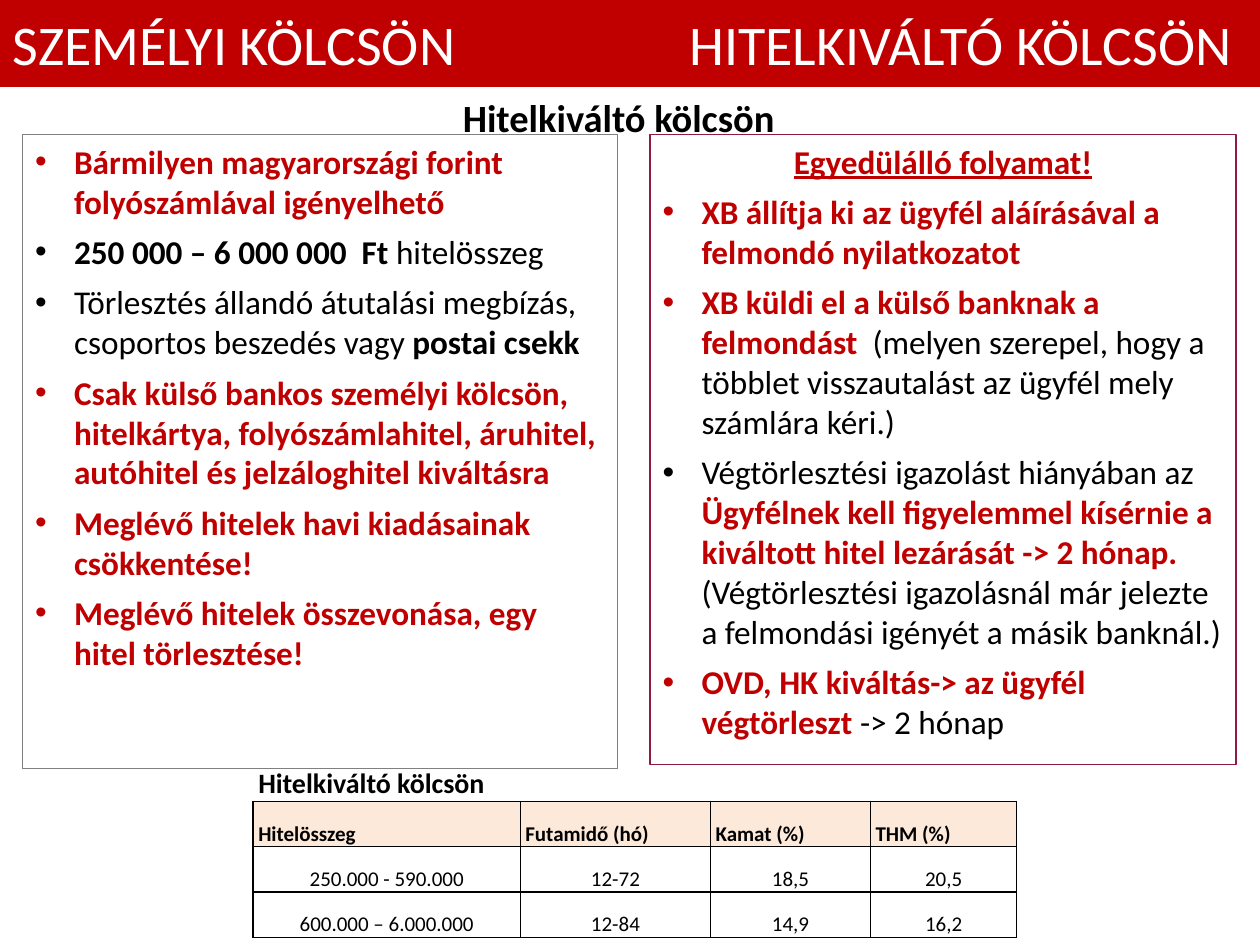
from lxml.etree import SubElement
from pptx import Presentation
from pptx.dml.color import RGBColor
from pptx.enum.shapes import MSO_SHAPE
from pptx.enum.text import MSO_ANCHOR, PP_ALIGN
from pptx.oxml.ns import qn
from pptx.util import Emu, Inches, Pt

FONT = "Calibri"
COLORS = {"red": "C00000", "black": "000000", "white": "FFFFFF", "gray": "808080",
          "wine": "8C1D40", "peach": "FDE9D9"}

# Run styles: colour, bold, underlined
STYLES = {"key": ("red", True, False), "strong": ("black", True, False),
          "plain": ("black", False, False), "headline": ("red", True, True),
          "banner": ("white", False, False)}

BANNER = "SZEMÉLYI KÖLCSÖN\tHITELKIVÁLTÓ KÖLCSÖN"
HEADING = "Hitelkiváltó kölcsön"

CONDITIONS = [
    [("Bármilyen magyarországi forint folyószámlával igényelhető", "key")],
    [("250 000 – 6 000 000  Ft ", "strong"), ("hitelösszeg", "plain")],
    [("Törlesztés állandó átutalási megbízás, csoportos beszedés vagy ", "plain"),
     ("postai csekk", "strong")],
    [("Csak külső bankos személyi kölcsön, hitelkártya, folyószámlahitel, áruhitel, "
      "autóhitel és jelzáloghitel kiváltásra", "key")],
    [("Meglévő hitelek havi kiadásainak csökkentése!", "key")],
    [("Meglévő hitelek összevonása, egy hitel törlesztése!", "key")],
]
PROCESS = [
    [("Egyedülálló folyamat!", "headline")],
    [("XB állítja ki az ügyfél aláírásával a felmondó nyilatkozatot", "key")],
    [("XB küldi el a külső banknak a felmondást  ", "key"),
     ("(melyen szerepel, hogy a többlet visszautalást az ügyfél mely számlára kéri.)", "plain")],
    [("Végtörlesztési igazolást hiányában az ", "plain"),
     ("Ügyfélnek kell figyelemmel kísérnie a kiváltott hitel lezárását -> 2 hónap. ", "key"),
     ("(Végtörlesztési igazolásnál már jelezte a felmondási igényét a másik banknál.)", "plain")],
    [("OVD, HK kiváltás-> az ügyfél végtörleszt ", "key"), ("-> 2 hónap", "plain")],
]
RATES = [
    [HEADING, "", "", ""],
    ["Hitelösszeg", "Futamidő (hó)", "Kamat (%)", "THM (%)"],
    ["250.000 - 590.000", "12-72", "18,5", "20,5"],
    ["600.000 – 6.000.000", "12-84", "14,9", "16,2"],
]
COLUMN_WIDTHS = [2.12, 1.51, 1.27, 1.16]
ROW_HEIGHTS = [0.48, 0.36, 0.36, 0.36]


def color(name):
    return RGBColor.from_string(COLORS[name])


def add_run(paragraph, text, style, size):
    run = paragraph.add_run()
    run.text = text
    color_name, bold, underline = STYLES[style]
    font = run.font
    font.name, font.size, font.bold, font.underline = FONT, Pt(size), bold, underline
    font.color.rgb = color(color_name)


def add_bullet(paragraph):
    properties = paragraph._p.get_or_add_pPr()
    properties.set("marL", str(Inches(0.31)))
    properties.set("indent", str(-Inches(0.31)))
    SubElement(properties, qn("a:buFont"), typeface="Arial")
    SubElement(properties, qn("a:buChar"), char="•")


def add_rectangle(slide, area, fill=None, line=None):
    shape = slide.shapes.add_shape(MSO_SHAPE.RECTANGLE, *map(Inches, area))
    shape.shadow.inherit = False
    if fill:
        shape.fill.solid()
        shape.fill.fore_color.rgb = color(fill)
    else:
        shape.fill.background()
    if line:
        shape.line.color.rgb = color(line)
        shape.line.width = Pt(0.75)
    else:
        shape.line.fill.background()
    shape.text_frame.word_wrap = True
    return shape


def add_panel(slide, area, line, paragraphs):
    """Framed box of bullets; an underlined headline is centred without a bullet."""
    frame = add_rectangle(slide, area, line=line).text_frame
    frame.vertical_anchor = MSO_ANCHOR.TOP
    for index, runs in enumerate(paragraphs):
        paragraph = frame.paragraphs[0] if index == 0 else frame.add_paragraph()
        if runs[0][1] == "headline":
            paragraph.alignment = PP_ALIGN.CENTER
        else:
            paragraph.alignment = PP_ALIGN.LEFT
            add_bullet(paragraph)
        if index:
            paragraph.space_before = Pt(6)
        for text, style in runs:
            add_run(paragraph, text, style, 19)


def add_banner(slide):
    shape = add_rectangle(slide, (0, 0, 10, 0.69), fill="red")
    shape.text_frame.vertical_anchor = MSO_ANCHOR.MIDDLE
    paragraph = shape.text_frame.paragraphs[0]
    paragraph.alignment = PP_ALIGN.LEFT
    tabs = SubElement(paragraph._p.get_or_add_pPr(), qn("a:tabLst"))
    SubElement(tabs, qn("a:tab"), pos=str(Inches(9.68)), algn="r")
    add_run(paragraph, BANNER, "banner", 32)


def set_borders(cell, visible_sides):
    """Draw the named sides in black and clear the others."""
    properties = cell._tc.get_or_add_tcPr()
    for index, side in enumerate("LRTB"):
        line = properties.makeelement(qn(f"a:ln{side}"), {"w": str(Pt(1))})
        properties.insert(index, line)
        if side in visible_sides:
            fill = SubElement(line, qn("a:solidFill"))
            SubElement(fill, qn("a:srgbClr"), val=COLORS["black"])
        else:
            SubElement(line, qn("a:noFill"))


def add_rate_table(slide):
    frame = slide.shapes.add_table(
        len(RATES), len(COLUMN_WIDTHS), Inches(2.01), Inches(5.88),
        Inches(sum(COLUMN_WIDTHS)), Inches(sum(ROW_HEIGHTS)))
    table = frame.table
    table.first_row = table.horz_banding = False
    for column, width in zip(table.columns, COLUMN_WIDTHS):
        column.width = Inches(width)
    for row, height in zip(table.rows, ROW_HEIGHTS):
        row.height = Inches(height)
    alignments = [PP_ALIGN.JUSTIFY, PP_ALIGN.LEFT, PP_ALIGN.CENTER, PP_ALIGN.CENTER]
    for row_index, values in enumerate(RATES):
        for column_index, value in enumerate(values):
            cell = table.cell(row_index, column_index)
            cell.vertical_anchor = MSO_ANCHOR.BOTTOM
            cell.margin_left = cell.margin_right = Inches(0.04)
            cell.margin_top = cell.margin_bottom = Emu(0)
            if row_index == 1:
                cell.fill.solid()
                cell.fill.fore_color.rgb = color("peach")
            else:
                cell.fill.background()
            set_borders(cell, "LRTB" if row_index else "B")
            if value:
                paragraph = cell.text_frame.paragraphs[0]
                paragraph.alignment = alignments[row_index]
                add_run(paragraph, value, "strong" if row_index < 2 else "plain",
                        12 if row_index else 16)
    table.cell(0, 0).merge(table.cell(0, 1))


def add_heading(slide):
    box = slide.shapes.add_textbox(*map(Inches, (2.97, 0.7, 3.88, 0.45)))
    box.text_frame.word_wrap = True
    paragraph = box.text_frame.paragraphs[0]
    paragraph.alignment = PP_ALIGN.CENTER
    add_run(paragraph, HEADING, "strong", 22)


def main():
    presentation = Presentation()
    presentation.slide_width, presentation.slide_height = Inches(10), Inches(7.5)
    slide = presentation.slides.add_slide(presentation.slide_layouts[6])
    add_heading(slide)
    add_panel(slide, (0.18, 1.07, 4.72, 5.03), "gray", CONDITIONS)
    add_banner(slide)
    add_rate_table(slide)
    add_panel(slide, (5.16, 1.07, 4.65, 5), "wine", PROCESS)
    presentation.save("out.pptx")


if __name__ == "__main__":
    main()
